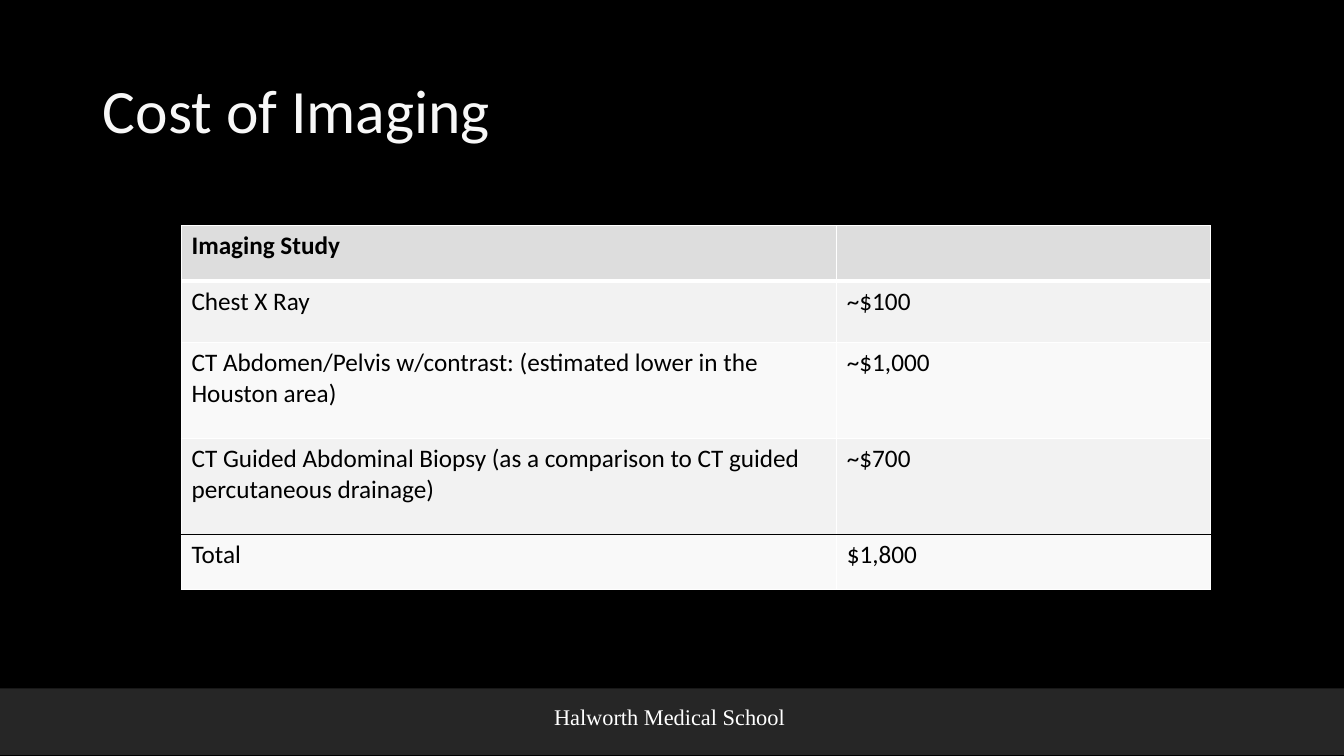
import pptx
import pptx.util
import pptx.dml.color
import pptx.enum.shapes
import pptx.enum.text
import pptx.oxml
import pptx.oxml.ns

Inches, Pt = pptx.util.Inches, pptx.util.Pt
ALIGN = pptx.enum.text.PP_ALIGN
ANCHOR = pptx.enum.text.MSO_ANCHOR

# Content
TITLE = "Cost of Imaging"
FOOTER = "Halworth Medical School"
ROWS = [
    ("Imaging Study", "", 0.55),
    ("Chest X Ray", "~$100", 0.61),
    ("CT Abdomen/Pelvis w/contrast: (estimated lower in the Houston area)", "~$1,000", 0.95),
    ("CT Guided Abdominal Biopsy (as a comparison to CT guided percutaneous drainage)",
     "~$700", 0.95),
    ("Total", "$1,800", 0.55),
]
COLUMN_WIDTHS = (6.5, 3.71)
COLORS = {"background": "000000", "footer": "262626", "title": "F8F8F8", "white": "FFFFFF",
          "text": "000000", "header": "DDDDDD", "odd": "F2F2F2", "even": "F9F9F9"}


def color(name):
    return pptx.dml.color.RGBColor.from_string(COLORS[name])


def add_text(para, text, size, font, color_name, bold=False):
    span = para.add_run()
    span.text = text
    span.font.size = Pt(size)
    span.font.name = font
    span.font.bold = bold
    span.font.color.rgb = color(color_name)


def set_borders(cell, borders):
    """Borders go before the fill, in the order left, right, top, bottom."""
    properties = cell._tc.get_or_add_tcPr()
    for index, (side, color_name, width) in enumerate(borders):
        line = pptx.oxml.parse_xml(
            f'<a:{side} {pptx.oxml.ns.nsdecls("a")} w="{Pt(width)}"><a:solidFill>'
            f'<a:srgbClr val="{COLORS[color_name]}"/></a:solidFill></a:{side}>')
        properties.insert(index, line)


deck = pptx.Presentation()
deck.slide_width, deck.slide_height = Inches(13.33), Inches(7.5)
page = deck.slides.add_slide(deck.slide_layouts[5])
page.background.fill.solid()
page.background.fill.fore_color.rgb = color("background")

# Footer band
band = page.shapes.add_shape(pptx.enum.shapes.MSO_SHAPE.RECTANGLE,
                             0, Inches(6.83), deck.slide_width, Inches(0.66))
band.shadow.inherit = False
band.fill.solid()
band.fill.fore_color.rgb = color("footer")
band.line.fill.background()
box = page.shapes.add_textbox(Inches(4.62), Inches(6.93), Inches(4.04), Inches(0.37))
box.text_frame.word_wrap = True
para = box.text_frame.paragraphs[0]
para.alignment = ALIGN.CENTER
add_text(para, FOOTER, 16, "Times New Roman", "white")

# Title
title = page.shapes.title
title.left, title.top, title.width, title.height = map(Inches, (0.92, 0.4, 11.5, 1.45))
title.text_frame.vertical_anchor = ANCHOR.MIDDLE
para = title.text_frame.paragraphs[0]
para.alignment = ALIGN.LEFT
para.line_spacing = 0.9
add_text(para, TITLE, 44, "Calibri", "title")

# Cost table
frame = page.shapes.add_table(len(ROWS), len(COLUMN_WIDTHS), Inches(1.8), Inches(2.24),
                              Inches(sum(COLUMN_WIDTHS)), Inches(sum(row[-1] for row in ROWS)))
table = frame.table
for column, width in zip(table.columns, COLUMN_WIDTHS):
    column.width = Inches(width)
total = len(ROWS) - 1
for number, (*texts, height) in enumerate(ROWS):
    table.rows[number].height = Inches(height)
    fill = "header" if number == 0 else "odd" if number % 2 else "even"
    top = ("lnT", "text" if number == total else "white", 3 if number == 1 else 1)
    bottom = ("lnB", "text" if number == total - 1 else "white", 3 if number == 0 else 1)
    for index, text in enumerate(texts):
        cell = table.cell(number, index)
        cell.fill.solid()
        cell.fill.fore_color.rgb = color(fill)
        set_borders(cell, [("lnL", "white", 1), ("lnR", "white", 1), top, bottom])
        if text:
            add_text(cell.text_frame.paragraphs[0], text, 18, "Calibri", "text", number == 0)

deck.save("out.pptx")
